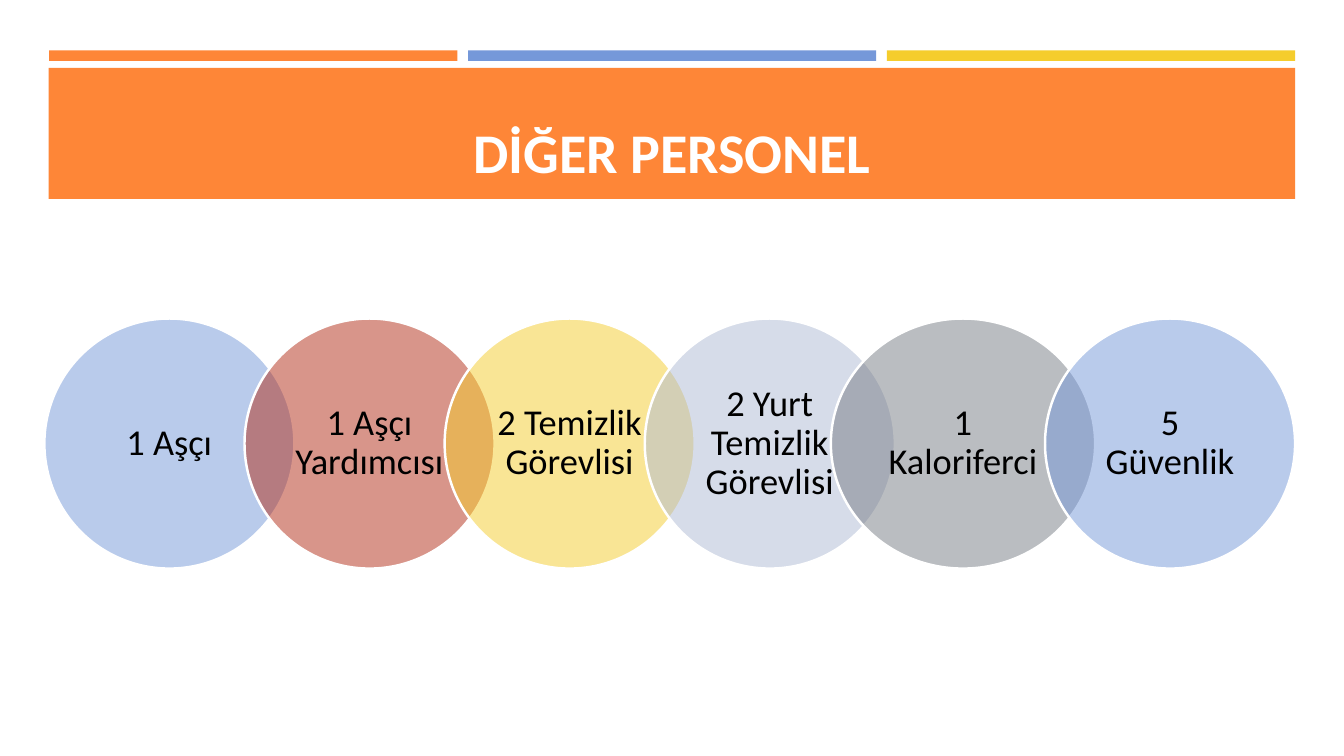
import pptx
import pptx.dml.color
import pptx.enum.shapes
import pptx.enum.text
import pptx.oxml.ns
import pptx.util
from lxml import etree

Pt = pptx.util.Pt
SHAPES = pptx.enum.shapes.MSO_SHAPE
ANCHORS = pptx.enum.text.MSO_ANCHOR
COLORS = {
    "orange": "FE8637",
    "blue": "7598D9",
    "yellow": "F5CD2D",
    "red": "B32C16",
    "lavender": "AEBAD5",
    "gray": "777C84",
    "white": "FFFFFF",
    "black": "000000",
}
DIAMETER = 178.6
CIRCLE_PITCH = 142.95
STAFF = [
    ("1 Aşçı", "blue"),
    ("1 Aşçı Yardımcısı", "red"),
    ("2 Temizlik Görevlisi", "yellow"),
    ("2 Yurt Temizlik Görevlisi", "lavender"),
    ("1 Kaloriferci", "gray"),
    ("5 Güvenlik", "blue"),
]
WIDE_CIRCLES = {4: (593.5, 188.8)}


def rgb(name):
    """Return the named colour."""
    return pptx.dml.color.RGBColor.from_string(COLORS[name])


def add_filled(slide, kind, box, color):
    """Add a preset shape with a solid fill and no outline."""
    shape = slide.shapes.add_shape(kind, *map(Pt, box))
    shape.shadow.inherit = False
    shape.fill.solid()
    shape.fill.fore_color.rgb = rgb(color)
    shape.line.fill.background()
    return shape


def write_text(shape, text, size, color, anchor, bold=False):
    """Write one centred paragraph into a shape."""
    frame = shape.text_frame
    frame.word_wrap = True
    frame.vertical_anchor = anchor
    paragraph = frame.paragraphs[0]
    paragraph.text = text
    paragraph.alignment = pptx.enum.text.PP_ALIGN.CENTER
    paragraph.font.name = "Calibri"
    paragraph.font.size = Pt(size)
    paragraph.font.bold = bold
    paragraph.font.color.rgb = rgb(color)
    return paragraph


def add_staff_circle(slide, left, width, text, color):
    """Add a half-transparent circle naming a group of staff."""
    circle = add_filled(slide, SHAPES.OVAL, (left, 227.5, width, DIAMETER), color)
    fill_color = circle.fill._xPr.find(".//" + pptx.oxml.ns.qn("a:srgbClr"))
    etree.SubElement(fill_color, pptx.oxml.ns.qn("a:alpha"), val="50000")
    circle.line.color.rgb = rgb("white")
    circle.line.width = Pt(1.75)
    frame = circle.text_frame
    frame.margin_left = frame.margin_right = Pt(9.6)
    frame.margin_top = frame.margin_bottom = Pt(2.7)
    paragraph = write_text(circle, text, 26, "black", ANCHORS.MIDDLE)
    paragraph.line_spacing = 0.9
    paragraph.space_after = Pt(11)


def add_header(slide):
    """Add the three accent bars and the title band."""
    for index, color in enumerate(("orange", "blue", "yellow")):
        add_filled(slide, SHAPES.RECTANGLE, (35.1 + index * 299.2, 36, 291.6, 7.5), color)
    add_filled(slide, SHAPES.RECTANGLE, (34.7, 48.5, 890.4, 93.6), "orange")
    title = slide.shapes.add_textbox(Pt(46), Pt(55.4), Pt(868.3), Pt(79.9))
    write_text(title, "DİĞER PERSONEL", 40, "white", ANCHORS.BOTTOM, bold=True)


def main():
    """Build the staff slide and save it."""
    presentation = pptx.Presentation()
    presentation.slide_width = Pt(960)
    presentation.slide_height = Pt(540)
    slide = presentation.slides.add_slide(presentation.slide_layouts[6])
    add_header(slide)
    for index, (text, color) in enumerate(STAFF):
        regular = (31.7 + index * CIRCLE_PITCH, DIAMETER)
        left, width = WIDE_CIRCLES.get(index, regular)
        add_staff_circle(slide, left, width, text, color)
    presentation.save("out.pptx")


if __name__ == "__main__":
    main()
